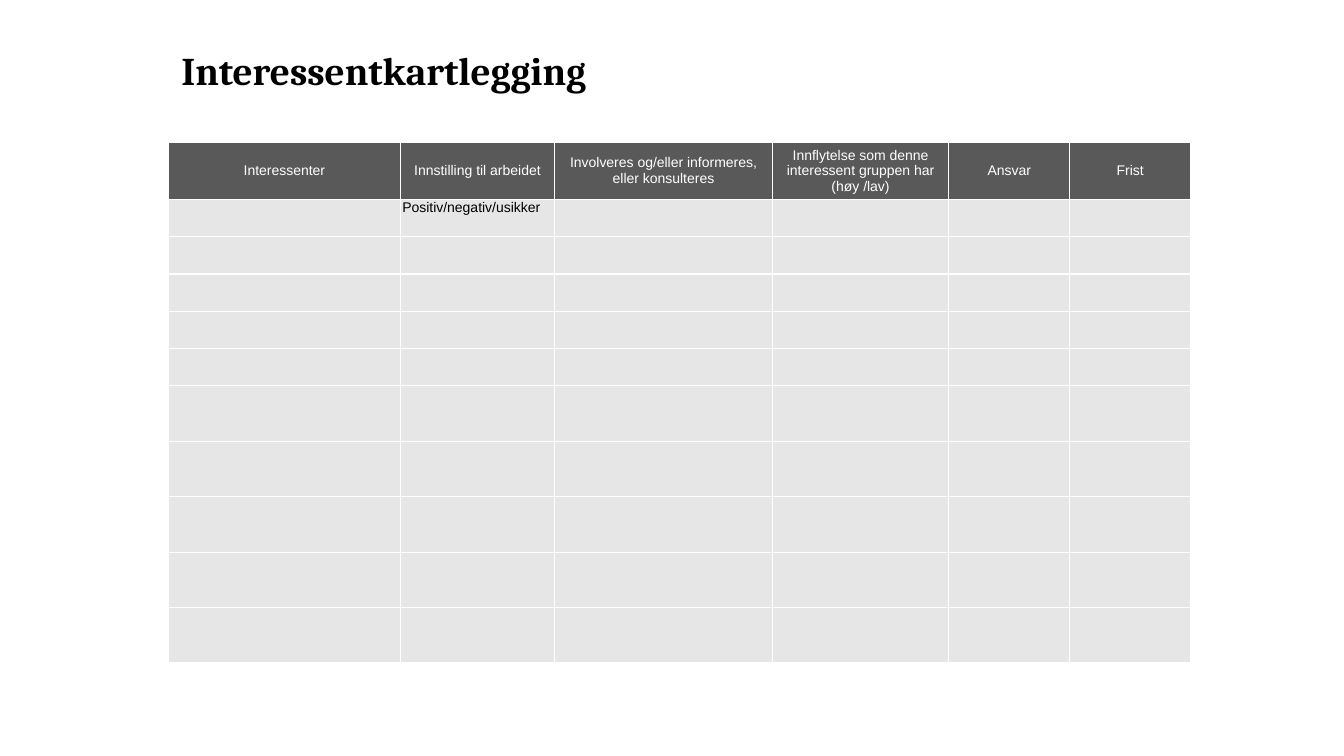
"""Builds the stakeholder mapping slide with its table."""
from lxml.etree import SubElement
from pptx import Presentation
from pptx.dml.color import RGBColor
from pptx.enum.text import MSO_ANCHOR, PP_ALIGN
from pptx.oxml.ns import qn
from pptx.util import Pt

PX = 9144
COLORS = {"ink": "000000", "white": "FFFFFF", "header": "595959", "body": "E7E6E6"}


def write_text(frame, text, size=10, font="Arial", color="ink", bold=False,
               align=PP_ALIGN.LEFT, spacing=None):
    frame.word_wrap = True
    frame.text = text
    for paragraph in frame.paragraphs:
        paragraph.alignment = align
        paragraph.line_spacing = spacing
        for run in paragraph.runs:
            run.font.size = Pt(size)
            run.font.name = font
            run.font.bold = bold
            run.font.color.rgb = RGBColor.from_string(COLORS[color])


def style_cell(cell, fill):
    cell.margin_left = cell.margin_right = 2 * PX
    cell.margin_top = cell.margin_bottom = 0
    properties = cell._tc.get_or_add_tcPr()
    for side in ("a:lnL", "a:lnR", "a:lnT", "a:lnB"):
        border = SubElement(properties, qn(side), w=str(Pt(1)))
        border_fill = SubElement(border, qn("a:solidFill"))
        SubElement(border_fill, qn("a:srgbClr"), val=COLORS["white"])
    cell.fill.solid()
    cell.fill.fore_color.rgb = RGBColor.from_string(COLORS[fill])


presentation = Presentation()
presentation.slide_width = 1333 * PX
presentation.slide_height = 750 * PX
slide = presentation.slides.add_slide(presentation.slide_layouts[6])

title = slide.shapes.add_textbox(170 * PX, 46 * PX, 997 * PX, 94 * PX)
write_text(title.text_frame, "Interessentkartlegging", size=28, font="Cambria",
           bold=True, spacing=0.9)

headings = [
    "Interessenter",
    "Innstilling til arbeidet",
    "Involveres og/eller informeres, eller konsulteres",
    "Innflytelse som denne interessent gruppen har\n(høy /lav)",
    "Ansvar",
    "Frist",
]
column_widths = [230, 153, 216, 175, 120, 120]
row_heights = [57] + [37] * 5 + [55] * 5

stakeholders = slide.shapes.add_table(
    len(row_heights), len(column_widths), 167 * PX, 141 * PX,
    sum(column_widths) * PX, sum(row_heights) * PX).table
for column, width in zip(stakeholders.columns, column_widths):
    column.width = width * PX
for row_number, (row, height) in enumerate(zip(stakeholders.rows, row_heights)):
    row.height = height * PX
    for cell in row.cells:
        style_cell(cell, "body" if row_number else "header")

for column_number, heading in enumerate(headings):
    heading_cell = stakeholders.cell(0, column_number)
    heading_cell.vertical_anchor = MSO_ANCHOR.MIDDLE
    write_text(heading_cell.text_frame, heading, color="white", align=PP_ALIGN.CENTER)
write_text(stakeholders.cell(1, 1).text_frame, "Positiv/negativ/usikker")

presentation.save("out.pptx")
